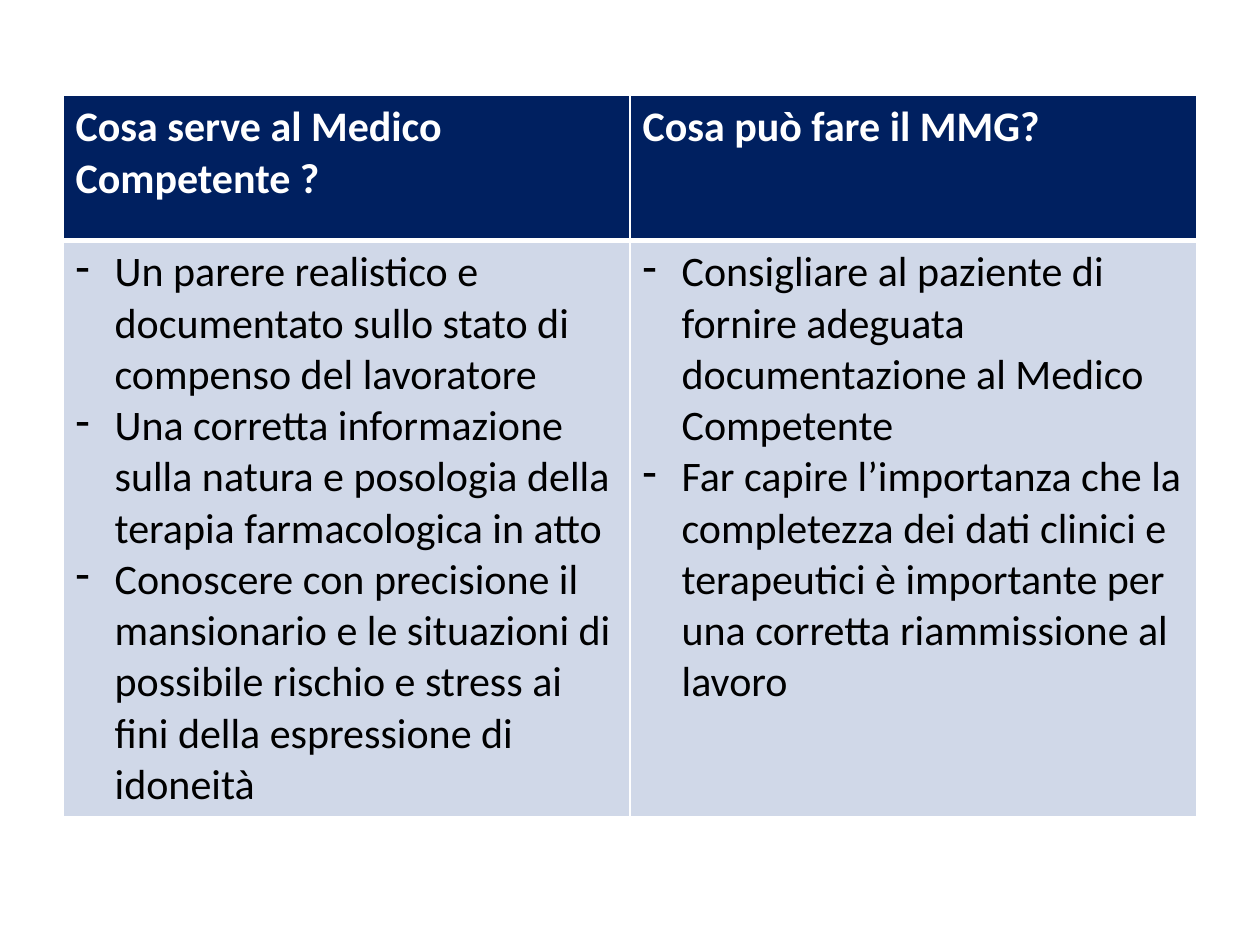
from pptx import Presentation
from pptx.dml.color import RGBColor
from pptx.oxml.ns import qn
from pptx.util import Inches, Pt
from lxml.etree import SubElement, Element

# Content: one entry per column
COLUMNS = [
    ("Cosa serve al Medico Competente ?", [
        "Un parere realistico e documentato sullo stato di compenso del lavoratore",
        "Una corretta informazione sulla natura e posologia della terapia farmacologica in atto",
        "Conoscere con precisione il mansionario e le situazioni di possibile rischio "
        "e stress ai fini della espressione di idoneità",
    ]),
    ("Cosa può fare il MMG?", [
        "Consigliare al paziente di fornire adeguata documentazione al Medico Competente",
        "Far capire l’importanza che la completezza dei dati clinici e terapeutici "
        "è importante per una corretta riammissione al lavoro",
    ]),
]

THEME = {
    "font": "Calibri", "size": 24,
    "header_fill": "002060", "header_text": "FFFFFF",
    "body_fill": "D0D8E8", "body_text": "000000",
    "border": "FFFFFF", "thin": 1, "thick": 3,
}
LEFT, TOP, WIDTH = 0.5, 0.76, 9
ROW_HEIGHTS = [1.15, 4.36]
INDENT = 0.31


def set_borders(cell, widths):
    """Draw the cell edges; they must come before the fill in the XML."""
    props = cell._tc.get_or_add_tcPr()
    for place, (side, points) in enumerate(widths.items()):
        line = Element(qn(f"a:ln{side}"), w=str(Pt(points)))
        fill = SubElement(line, qn("a:solidFill"))
        SubElement(fill, qn("a:srgbClr"), val=THEME["border"])
        props.insert(place, line)


def add_dash(para):
    props = para._p.get_or_add_pPr()
    props.set("marL", str(Inches(INDENT)))
    props.set("indent", str(-Inches(INDENT)))
    SubElement(props, qn("a:buFontTx"))
    SubElement(props, qn("a:buChar"), char="-")


def fill_cell(cell, texts, part, header):
    cell.fill.solid()
    cell.fill.fore_color.rgb = RGBColor.from_string(THEME[f"{part}_fill"])
    frame = cell.text_frame
    for number, text in enumerate(texts):
        para = frame.add_paragraph() if number else frame.paragraphs[0]
        if not header:
            add_dash(para)
        span = para.add_run()
        span.text = text
        span.font.name = THEME["font"]
        span.font.size = Pt(THEME["size"])
        span.font.bold = header
        span.font.color.rgb = RGBColor.from_string(THEME[f"{part}_text"])
    thin, thick = THEME["thin"], THEME["thick"]
    set_borders(cell, {
        "L": thin, "R": thin,
        "T": thin if header else thick,
        "B": thick if header else thin,
    })


def main():
    deck = Presentation()
    deck.slide_width, deck.slide_height = Inches(10), Inches(7.5)
    page = deck.slides.add_slide(deck.slide_layouts[6])

    # Comparison table
    table = page.shapes.add_table(
        len(ROW_HEIGHTS), len(COLUMNS), Inches(LEFT), Inches(TOP),
        Inches(WIDTH), Inches(sum(ROW_HEIGHTS))).table
    table.horz_banding = False
    for row, height in zip(table.rows, ROW_HEIGHTS):
        row.height = Inches(height)

    # Heading above, dashed list below
    for index, (heading, points) in enumerate(COLUMNS):
        table.columns[index].width = Inches(WIDTH / len(COLUMNS))
        fill_cell(table.cell(0, index), [heading], "header", True)
        fill_cell(table.cell(1, index), points, "body", False)

    deck.save("out.pptx")


if __name__ == "__main__":
    main()
